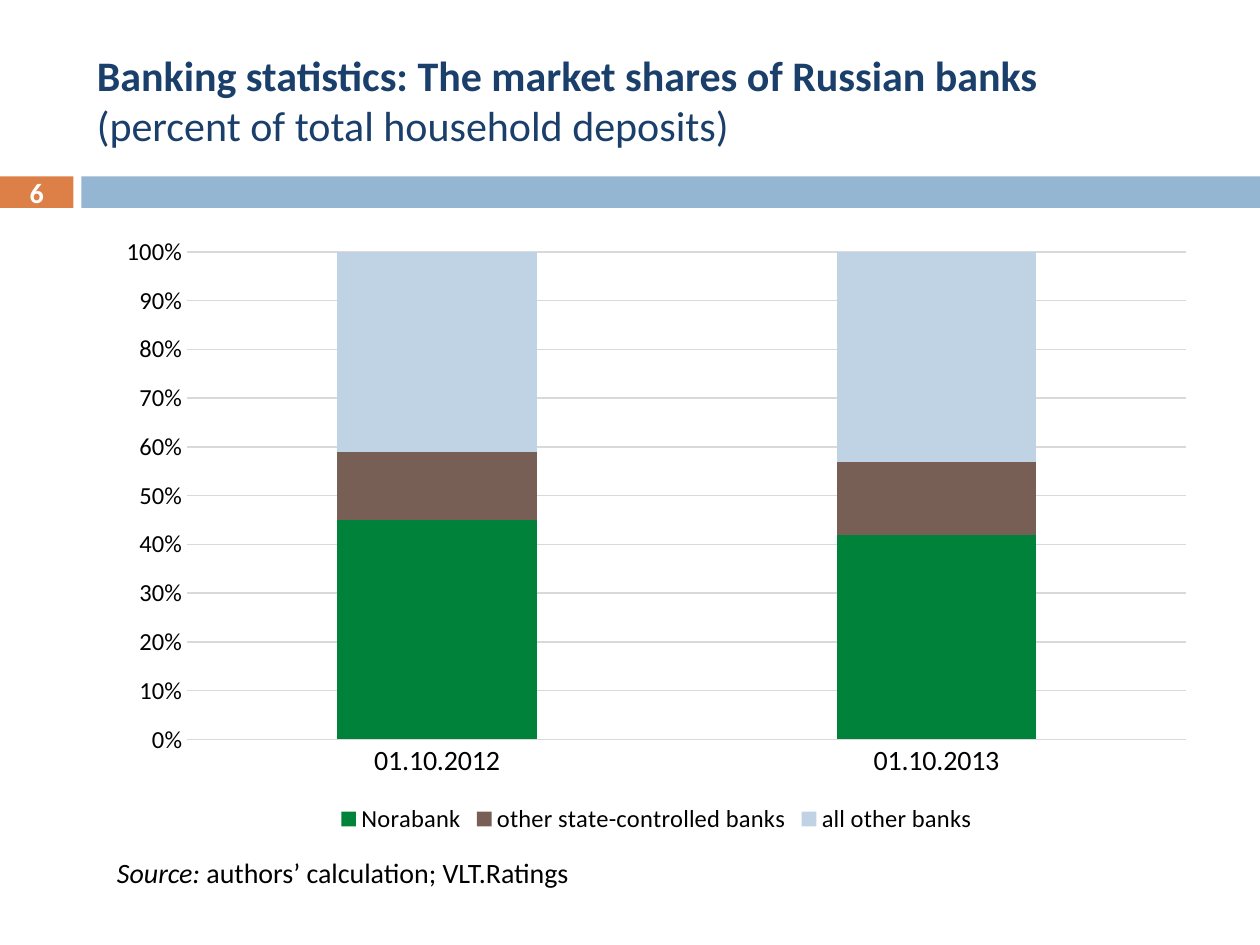
from dataclasses import dataclass

import pptx
import pptx.chart.data
import pptx.dml.color
import pptx.enum.chart
import pptx.enum.shapes
import pptx.enum.text
import pptx.oxml
import pptx.oxml.ns
import pptx.util

WIDTH, HEIGHT = pptx.util.Inches(10), pptx.util.Inches(7.5)
FONT = "Calibri"
COLORS = {
    "navy": "1B3F6B", "white": "FFFFFF", "black": "000000",
    "orange": "DD8047", "blue": "94B6D2", "grid": "D9D9D9",
    "green": "00823B", "brown": "775F55", "pale": "BFD3E4",
}
PLOT = {"x": 0.075, "y": 0.045, "w": 0.905, "h": 0.793}
ALIGN = pptx.enum.text.PP_ALIGN
ANCHOR = pptx.enum.text.MSO_ANCHOR


@dataclass(frozen=True)
class Box:
    """Left, top, width and height in percent of the slide."""
    x: float
    y: float
    w: float
    h: float

    def emu(self) -> tuple[int, ...]:
        return (int(WIDTH * self.x / 100), int(HEIGHT * self.y / 100),
                int(WIDTH * self.w / 100), int(HEIGHT * self.h / 100))


@dataclass(frozen=True)
class Band:
    box: Box
    color: str


@dataclass(frozen=True)
class Run:
    text: str
    bold: bool = False
    italic: bool = False


@dataclass(frozen=True)
class Label:
    box: Box
    runs: tuple[Run, ...]
    size: int
    color: str
    align: ALIGN = ALIGN.LEFT
    anchor: ANCHOR = ANCHOR.MIDDLE


@dataclass(frozen=True)
class Series:
    name: str
    values: tuple[int, ...]
    color: str


BANDS = (
    Band(Box(0, 18.67, 5.83, 3.33), "orange"),
    Band(Box(6.46, 18.67, 93.54, 3.33), "blue"),
)
LABELS = (
    Label(Box(6.7, 3.33, 89.2, 14.4),
          (Run("Banking statistics: The market shares of Russian banks\v", bold=True),
           Run("(percent of total household deposits)")), 24, "navy"),
    Label(Box(0, 18.53, 5.83, 3.6), (Run("6", bold=True),), 16, "white", ALIGN.CENTER),
    Label(Box(8.3, 89.87, 85.8, 4.93),
          (Run("Source:", italic=True), Run(" authors’ calculation; VLT.Ratings")),
          16, "black", anchor=ANCHOR.TOP),
)
CHART_BOX = Box(8.3, 23.73, 87.6, 65.07)
DATES = ("01.10.2012", "01.10.2013")
SERIES = (
    Series("Norabank", (45, 42), "green"),
    Series("other state-controlled banks", (14, 15), "brown"),
    Series("all other banks", (41, 43), "pale"),
)


def rgb(name: str) -> pptx.dml.color.RGBColor:
    return pptx.dml.color.RGBColor.from_string(COLORS[name])


def apply(obj, values: dict) -> None:
    for key, value in values.items():
        setattr(obj, key, value)


def set_font(font, size: int, color: str, **extra) -> None:
    apply(font, {"name": FONT, "size": pptx.util.Pt(size), **extra})
    font.color.rgb = rgb(color)


def draw_band(s, band: Band) -> None:
    sp = s.shapes.add_shape(pptx.enum.shapes.MSO_SHAPE.RECTANGLE, *band.box.emu())
    sp.shadow.inherit = False
    sp.fill.solid()
    sp.fill.fore_color.rgb = rgb(band.color)
    sp.line.fill.background()


def draw_label(s, label: Label) -> None:
    tf = s.shapes.add_textbox(*label.box.emu()).text_frame
    apply(tf, {"word_wrap": True, "vertical_anchor": label.anchor})
    p = tf.paragraphs[0]
    p.alignment = label.align
    for run in label.runs:
        r = p.add_run()
        r.text = run.text.rstrip("\v")
        set_font(r.font, label.size, label.color, bold=run.bold, italic=run.italic)
        if run.text.endswith("\v"):
            p.add_line_break()


def style_line(line) -> None:
    line.color.rgb = rgb("grid")
    line.width = pptx.util.Pt(0.75)


def set_plot_layout(chart) -> None:
    area = chart.element.find(".//" + pptx.oxml.ns.qn("c:plotArea"))
    old = area.find(pptx.oxml.ns.qn("c:layout"))
    if old is not None:
        area.remove(old)
    modes = '<c:layoutTarget val="inner"/><c:xMode val="edge"/><c:yMode val="edge"/>'
    sizes = "".join(f'<c:{key} val="{value}"/>' for key, value in PLOT.items())
    area.insert(0, pptx.oxml.parse_xml(
        f'<c:layout {pptx.oxml.ns.nsdecls("c")}><c:manualLayout>'
        f"{modes}{sizes}</c:manualLayout></c:layout>"))


def draw_chart(s) -> None:
    data = pptx.chart.data.CategoryChartData(number_format="0")
    data.categories = DATES
    for item in SERIES:
        data.add_series(item.name, item.values)
    kind = pptx.enum.chart.XL_CHART_TYPE.COLUMN_STACKED_100
    chart = s.shapes.add_chart(kind, *CHART_BOX.emu(), data).chart
    apply(chart, {"has_title": False, "has_legend": True})
    set_font(chart.font, 10, "black")
    plot = chart.plots[0]
    apply(plot, {"gap_width": 150, "overlap": 100, "vary_by_categories": False})
    for series, item in zip(plot.series, SERIES):
        series.format.fill.solid()
        series.format.fill.fore_color.rgb = rgb(item.color)
    none = pptx.enum.chart.XL_TICK_MARK.NONE
    for axis, size in ((chart.category_axis, 16), (chart.value_axis, 14)):
        apply(axis, {"major_tick_mark": none, "minor_tick_mark": none})
        set_font(axis.tick_labels.font, size, "black")
    style_line(chart.category_axis.format.line)
    axis = chart.value_axis
    axis.has_major_gridlines = True
    style_line(axis.major_gridlines.format.line)
    axis.format.line.fill.background()
    apply(axis.tick_labels, {"number_format": "0%", "number_format_is_linked": False})
    apply(chart.legend, {"position": pptx.enum.chart.XL_LEGEND_POSITION.BOTTOM,
                         "include_in_layout": False})
    set_font(chart.legend.font, 14, "black")
    set_plot_layout(chart)


def main() -> None:
    prs = pptx.Presentation()
    apply(prs, {"slide_width": WIDTH, "slide_height": HEIGHT})
    s = prs.slides.add_slide(prs.slide_layouts[6])
    for band in BANDS:
        draw_band(s, band)
    for label in LABELS:
        draw_label(s, label)
    draw_chart(s)
    prs.save("out.pptx")


if __name__ == "__main__":
    main()
